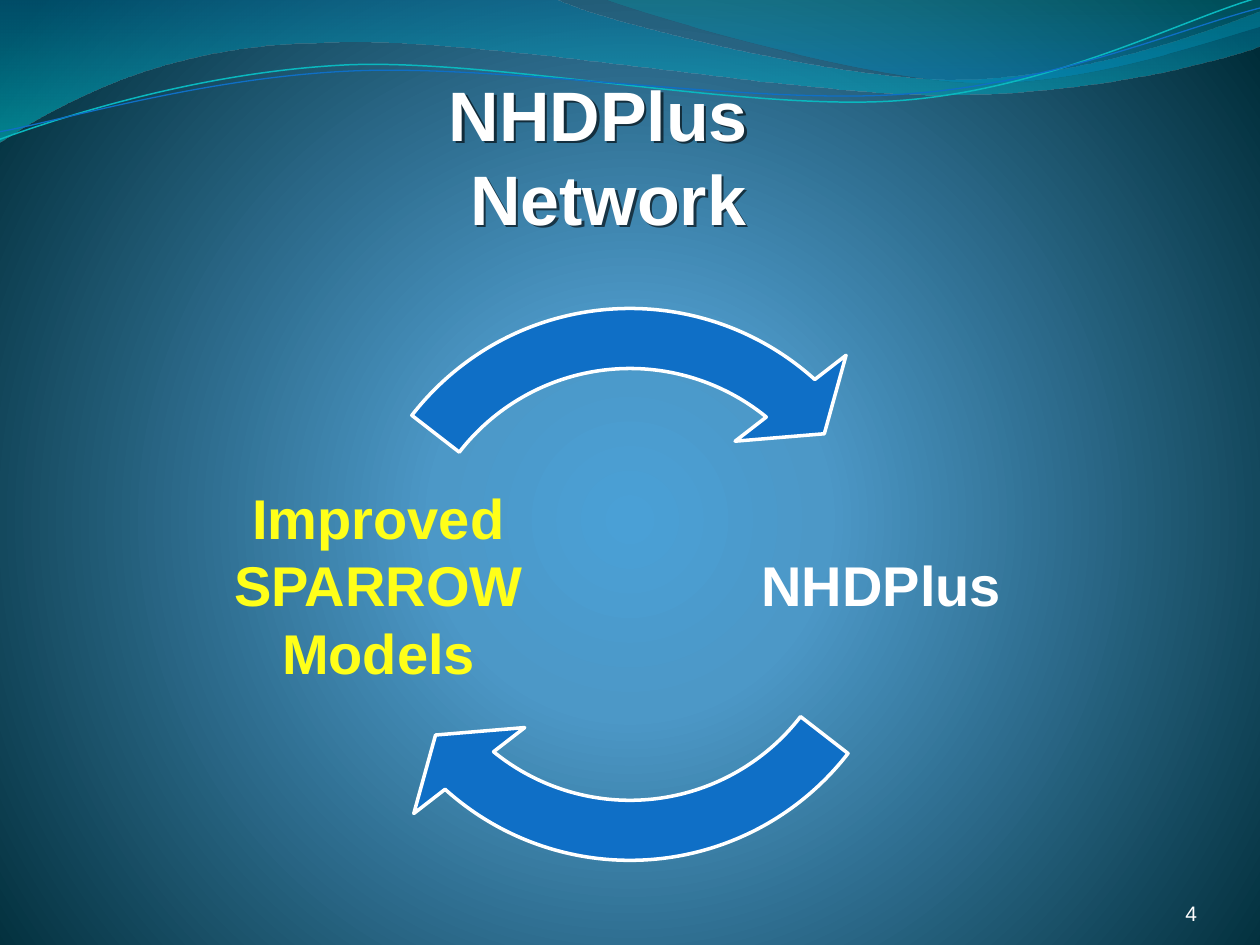
from collections import namedtuple
from dataclasses import dataclass

from lxml import etree
from pptx import Presentation
from pptx.dml.color import RGBColor
from pptx.enum.shapes import MSO_SHAPE
from pptx.enum.text import MSO_ANCHOR, PP_ALIGN
from pptx.oxml.ns import qn
from pptx.util import Inches, Pt

CIRCULAR_ARROW = MSO_SHAPE.CIRCULAR_ARROW
MIDDLE, BOTTOM = MSO_ANCHOR.MIDDLE, MSO_ANCHOR.BOTTOM
CENTER, RIGHT = PP_ALIGN.CENTER, PP_ALIGN.RIGHT

Box = namedtuple("Box", "left top width height")
SLIDE = Box(0, 0, Inches(10), Inches(7.5))


@dataclass(frozen=True)
class Theme:
    font: str = "Arial"
    white: str = "FFFFFF"
    highlight: str = "FFFF19"
    blue: str = "0F6FC6"
    teal: str = "0AB8BF"
    shadow: str = "000000"
    backdrop: tuple = ((0, "4AA0D6", 100), (25, "4C98C7", 100), (100, "002C38", 100))
    wide_wave: tuple = ((0, "0074A1", 45), (100, "00C6CF", 55))
    corner_wave: tuple = ((0, "00A1A9", 30), (80, "008BBF", 45))
    title_size: float = 40
    label_size: float = 32
    number_size: float = 12
    arrow_line: float = 2


THEME = Theme()

# Wave outlines in thousandths of the slide's width;
# a pair is a straight step, six numbers are a Bézier curve.
WIDE_WAVE = [
    (0, -1), (440, -1), (476, 17, 664, 63, 758, 63),
    (853, 63, 958, 26, 1000, 9), (1001, 36),
    (983, 44, 870, 76, 746, 75), (622, 75, 382, 28, 257, 34),
    (129, 35, 46, 83, -1, 113), (0, -1),
]
CORNER_WAVE = [
    (479, -1), (509, 11, 682, 62, 769, 65),
    (856, 69, 961, 32, 1000, 21), (1000, 0), (479, -1),
]
TEAL_LINE = [
    (-2, 87), (47, 72, 158, 41, 277, 41),
    (396, 42, 591, 93, 712, 90), (832, 87, 940, 36, 1000, 22),
]
BLUE_LINE = [
    (-2, 81), (46, 75, 164, 45, 283, 46),
    (404, 47, 596, 88, 716, 85), (835, 83, 942, 42, 1002, 30),
]
LINE_TILT = -2.7


def part(box, left, top, width, height):
    """Return the part of a box given by shares of its width and height."""
    return Box(round(box.left + left * box.width), round(box.top + top * box.height),
               round(width * box.width), round(height * box.height))


def set_gradient(fill, stops, focus=None):
    """Fill with (position, colour, opacity) stops, downwards or around a focus."""
    fill.gradient()
    grad = fill._xPr.find(qn("a:gradFill"))
    for child in list(grad):
        grad.remove(child)
    stop_list = etree.SubElement(grad, qn("a:gsLst"))
    for position, color, opacity in stops:
        stop = etree.SubElement(stop_list, qn("a:gs"), pos=str(position * 1000))
        rgb = etree.SubElement(stop, qn("a:srgbClr"), val=color)
        if opacity < 100:
            etree.SubElement(rgb, qn("a:alpha"), val=str(opacity * 1000))
    if focus:
        path = etree.SubElement(grad, qn("a:path"), path="circle")
        edges = {side: str(share * 1000) for side, share in zip("ltrb", focus)}
        etree.SubElement(path, qn("a:fillToRect"), **edges)
    else:
        etree.SubElement(grad, qn("a:lin"), ang="5400000", scaled="1")


def set_line(shape, color, width):
    shape.line.color.rgb = RGBColor.from_string(color)
    shape.line.width = Pt(width)


def add_curve(slide, box, outline, close):
    """Draw an outline, joining each curve's three points into one Bézier step."""
    points = [step[i:i + 2] for step in outline for i in range(0, len(step), 2)]
    builder = slide.shapes.build_freeform(*points[0], scale=box.width / 1000)
    builder.add_line_segments(points[1:], close=close)
    curve = builder.convert_to_shape(box.left, box.top)
    straight_steps = iter(list(curve._element.iter(qn("a:lnTo"))))
    for step in outline[1:]:
        first = next(straight_steps)
        if len(step) == 6:
            first.tag = qn("a:cubicBezTo")
            for _ in range(2):
                following = next(straight_steps)
                first.append(following[0])
                following.getparent().remove(following)
    curve.shadow.inherit = False
    return curve


def add_waves(slide, box):
    for outline, stops in ((WIDE_WAVE, THEME.wide_wave), (CORNER_WAVE, THEME.corner_wave)):
        wave = add_curve(slide, box, outline, True)
        set_gradient(wave.fill, stops)
        wave.line.fill.background()
    for outline, color, width in ((TEAL_LINE, THEME.teal, 0.85), (BLUE_LINE, THEME.blue, 0.75)):
        line = add_curve(slide, box, outline, False)
        line.rotation = LINE_TILT
        line.fill.background()
        set_line(line, color, width)


def add_text(slide, box, text, size, color=THEME.white, bold=True, align=CENTER,
             anchor=MIDDLE, insets=(0, 0, 0, 0)):
    text_box = slide.shapes.add_textbox(*box)
    frame = text_box.text_frame
    frame.word_wrap = True
    frame.vertical_anchor = anchor
    (frame.margin_left, frame.margin_top,
     frame.margin_right, frame.margin_bottom) = map(Inches, insets)
    frame.text = text
    for paragraph in frame.paragraphs:
        paragraph.alignment = align
        for run in paragraph.runs:
            run.font.name = THEME.font
            run.font.size = Pt(size)
            run.font.bold = bold
            run.font.color.rgb = RGBColor.from_string(color)
    return text_box


def add_title(slide, box):
    title = add_text(slide, box, "NHDPlus\v Network", THEME.title_size,
                     anchor=BOTTOM, insets=(0, 0.05, 0, 0))
    effects = etree.SubElement(title._element.spPr, qn("a:effectLst"))
    shadow = etree.SubElement(effects, qn("a:outerShdw"), dist="25400", dir="2700000")
    rgb = etree.SubElement(shadow, qn("a:srgbClr"), val=THEME.shadow)
    etree.SubElement(rgb, qn("a:alpha"), val="60000")


def add_cycle(slide, box):
    """Place two labels at the sides of a ring of two arrows."""
    label_width, label_height = Inches(2.44) / box.width, Inches(2.44) / box.height
    ring_width = box.height / box.width
    labels = (("NHDPlus", THEME.white, 1 - label_width),
              ("Improved\nSPARROW Models", THEME.highlight, 0))
    for half, (text, color, left) in enumerate(labels):
        add_text(slide, part(box, left, (1 - label_height) / 2, label_width, label_height),
                 text, THEME.label_size, color, insets=(0.04,) * 4)
        arrow = slide.shapes.add_shape(
            CIRCULAR_ARROW, *part(box, (1 - ring_width) / 2, 0, ring_width, 1))
        half_turn = 108 * half
        values = (0.095, 6.856, 78.478 + half_turn, 22.666 + half_turn, 0.111)
        for index, value in enumerate(values):
            arrow.adjustments[index] = value
        arrow.shadow.inherit = False
        arrow.fill.solid()
        arrow.fill.fore_color.rgb = RGBColor.from_string(THEME.blue)
        set_line(arrow, THEME.white, THEME.arrow_line)


def add_page_number(slide, box):
    add_text(slide, box, "4", THEME.number_size, bold=False, align=RIGHT, anchor=BOTTOM)


def main():
    deck = Presentation()
    deck.slide_width, deck.slide_height = SLIDE.width, SLIDE.height
    slide = deck.slides.add_slide(deck.slide_layouts[6])
    set_gradient(slide.background.fill, THEME.backdrop, focus=(10, 110, 10, 100))
    add_waves(slide, SLIDE)
    add_page_number(slide, part(SLIDE, 0.867, 0.927, 0.083, 0.053))
    add_cycle(slide, part(SLIDE, 0.1785, 0.284, 0.643, 0.669))
    add_title(slide, part(SLIDE, 0.025, 0.133, 0.9, 0.12))
    deck.save("out.pptx")


if __name__ == "__main__":
    main()
